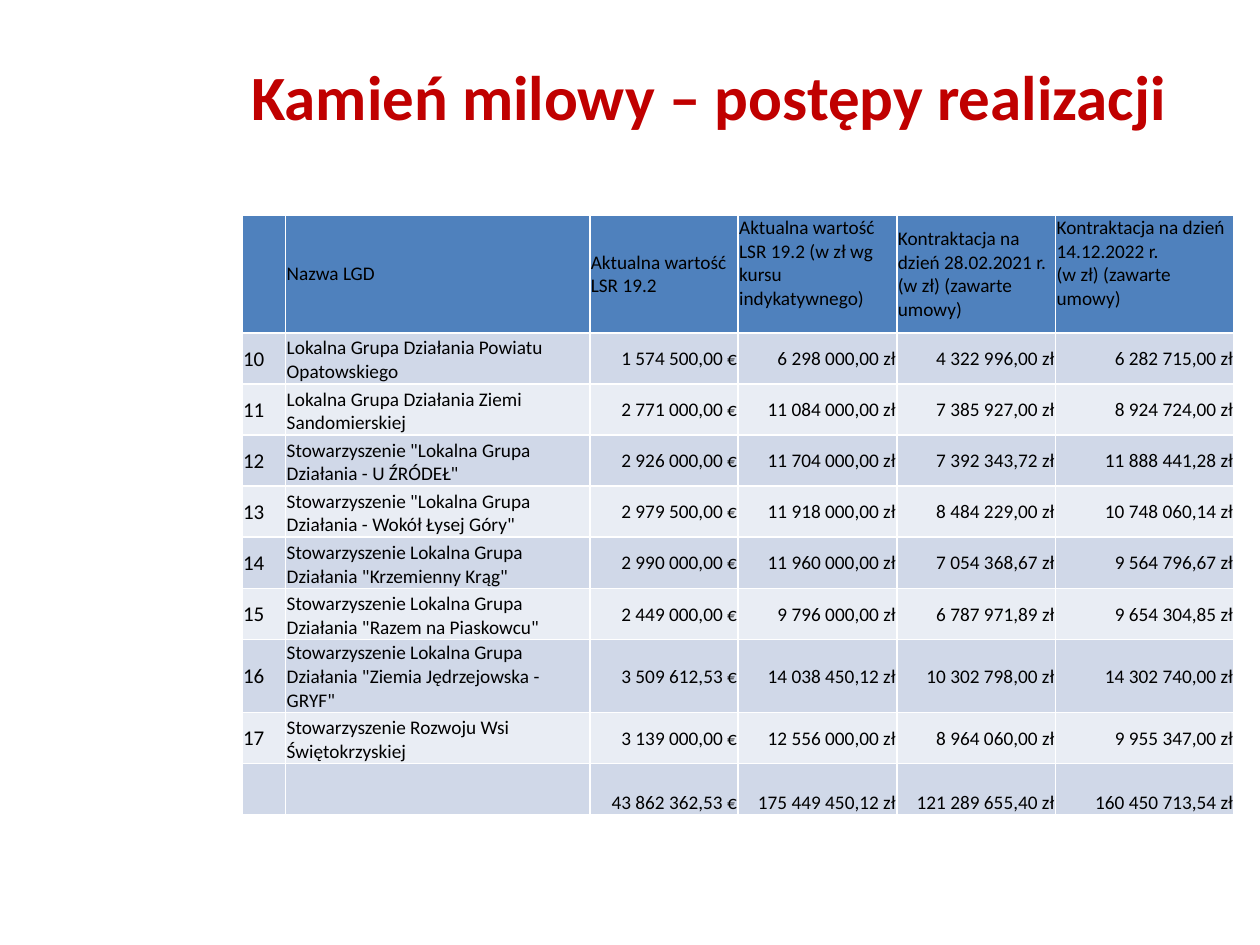
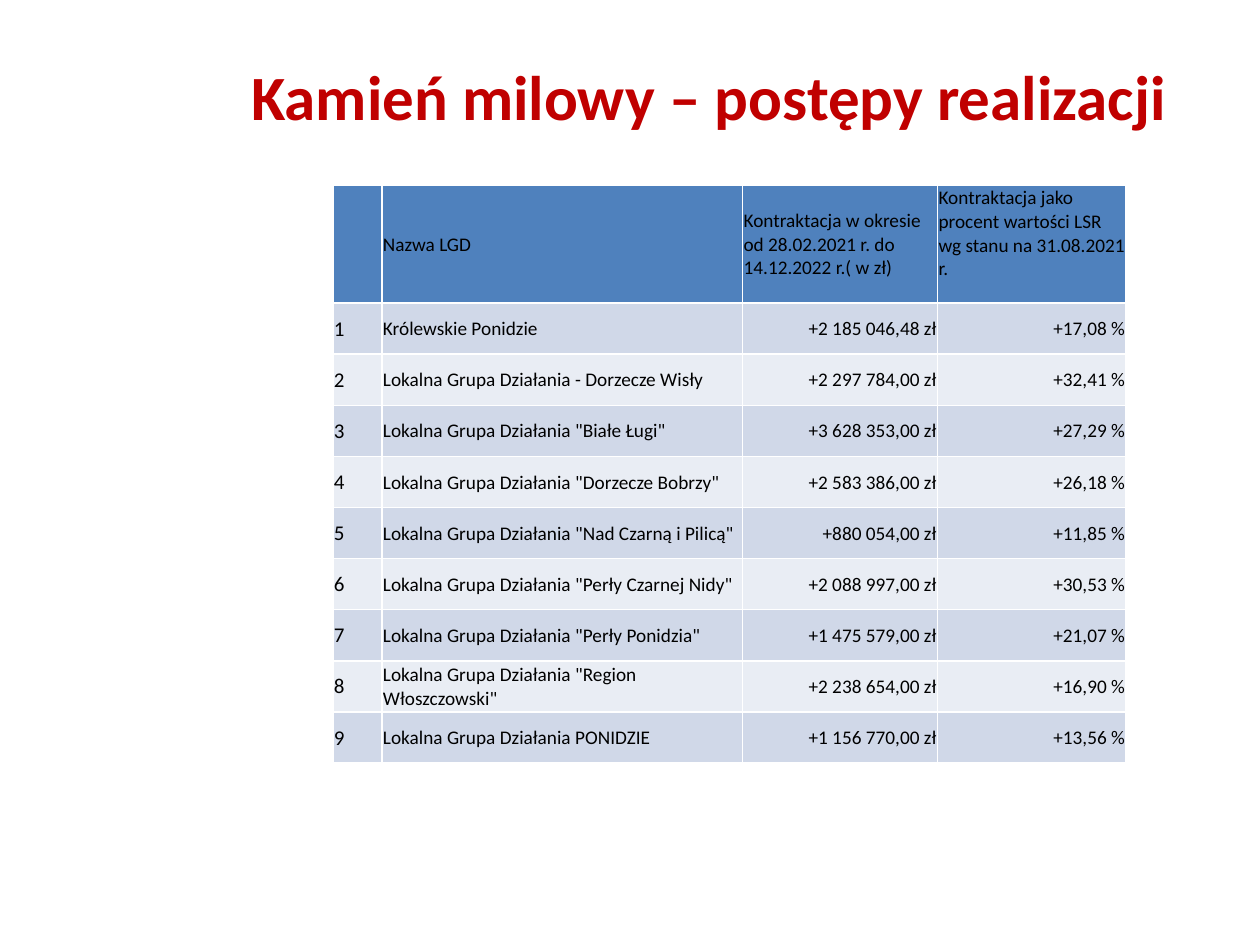
from dataclasses import dataclass
from pptx import Presentation
from pptx import util as u
from pptx.dml import color
from pptx.enum import text


@dataclass
class Theme:
    font: str = "Calibri"
    title: str = "C00000"
    ink: str = "000000"
    head: str = "4F81BD"
    bands: tuple = ("D0D8E8", "E9EDF4")
    big: int = 36
    mid: int = 12
    small: int = 11


theme = Theme()
top, mid, low = (text.MSO_ANCHOR.TOP, text.MSO_ANCHOR.MIDDLE,
                 text.MSO_ANCHOR.BOTTOM)
left, right, center = (text.PP_ALIGN.LEFT, text.PP_ALIGN.RIGHT,
                       text.PP_ALIGN.CENTER)


def style(frame, size, tone, align, bold=False):
    for para in frame.paragraphs:
        para.alignment = align
        looks = {"name": theme.font, "size": u.Pt(size), "bold": bold}
        for key, value in looks.items():
            setattr(para.font, key, value)
        para.font.color.rgb = color.RGBColor.from_string(tone)


pages = [
    {
        "left": 4.88, "top": 4.33, "names": low, "raised": (3, 5),
        "cols": [0.88, 6.13, 2.99, 3.2, 3.2, 3.6],
        "tall": {7: 1.47}, "total": 9,
        "rows": [
            ("", "Nazwa LGD", "Aktualna wartość LSR 19.2",
             "Aktualna wartość LSR 19.2 (w zł wg kursu indykatywnego)",
             "Kontraktacja na dzień 28.02.2021 r.\n(w zł) (zawarte umowy)",
             "Kontraktacja na dzień 14.12.2022 r.\n(w zł) (zawarte umowy)"),
            ("10", "Lokalna Grupa Działania Powiatu Opatowskiego",
             "1 574 500,00 €", "6 298 000,00 zł",
             "4 322 996,00 zł", "6 282 715,00 zł"),
            ("11", "Lokalna Grupa Działania Ziemi Sandomierskiej",
             "2 771 000,00 €", "11 084 000,00 zł",
             "7 385 927,00 zł", "8 924 724,00 zł"),
            ("12", 'Stowarzyszenie "Lokalna Grupa Działania - U ŹRÓDEŁ"',
             "2 926 000,00 €", "11 704 000,00 zł",
             "7 392 343,72 zł", "11 888 441,28 zł"),
            ("13", 'Stowarzyszenie "Lokalna Grupa Działania - Wokół Łysej Góry"',
             "2 979 500,00 €", "11 918 000,00 zł",
             "8 484 229,00 zł", "10 748 060,14 zł"),
            ("14", 'Stowarzyszenie Lokalna Grupa Działania "Krzemienny Krąg"',
             "2 990 000,00 €", "11 960 000,00 zł",
             "7 054 368,67 zł", "9 564 796,67 zł"),
            ("15", 'Stowarzyszenie Lokalna Grupa Działania "Razem na Piaskowcu"',
             "2 449 000,00 €", "9 796 000,00 zł",
             "6 787 971,89 zł", "9 654 304,85 zł"),
            ("16", 'Stowarzyszenie Lokalna Grupa Działania "Ziemia Jędrzejowska - GRYF"',
             "3 509 612,53 €", "14 038 450,12 zł",
             "10 302 798,00 zł", "14 302 740,00 zł"),
            ("17", "Stowarzyszenie Rozwoju Wsi Świętokrzyskiej",
             "3 139 000,00 €", "12 556 000,00 zł",
             "8 964 060,00 zł", "9 955 347,00 zł"),
            ("", "", "43 862 362,53 €", "175 449 450,12 zł",
             "121 289 655,40 zł", "160 450 713,54 zł"),
        ],
    },
    {
        "left": 6.71, "top": 3.73, "names": mid, "raised": (3,),
        "cols": [0.99, 7.27, 3.93, 3.8],
        "tall": {}, "total": None,
        "rows": [
            ("", "Nazwa LGD",
             "Kontraktacja w okresie od 28.02.2021 r. do 14.12.2022 r.( w zł)",
             "Kontraktacja jako procent wartości LSR wg stanu na 31.08.2021 r."),
            ("1", "Królewskie Ponidzie", "+2 185 046,48 zł", "+17,08 %"),
            ("2", "Lokalna Grupa Działania - Dorzecze Wisły",
             "+2 297 784,00 zł", "+32,41 %"),
            ("3", 'Lokalna Grupa Działania "Białe Ługi"',
             "+3 628 353,00 zł", "+27,29 %"),
            ("4", 'Lokalna Grupa Działania "Dorzecze Bobrzy"',
             "+2 583 386,00 zł", "+26,18 %"),
            ("5", 'Lokalna Grupa Działania "Nad Czarną i Pilicą"',
             "+880 054,00 zł", "+11,85 %"),
            ("6", 'Lokalna Grupa Działania "Perły Czarnej Nidy"',
             "+2 088 997,00 zł", "+30,53 %"),
            ("7", 'Lokalna Grupa Działania "Perły Ponidzia"',
             "+1 475 579,00 zł", "+21,07 %"),
            ("8", 'Lokalna Grupa Działania "Region Włoszczowski"',
             "+2 238 654,00 zł", "+16,90 %"),
            ("9", "Lokalna Grupa Działania PONIDZIE",
             "+1 156 770,00 zł", "+13,56 %"),
        ],
    },
]

deck = Presentation()
deck.slide_width, deck.slide_height = u.Cm(25.4), u.Cm(19.05)

for page in pages:
    slide = deck.slides.add_slide(deck.slide_layouts[6])
    box = slide.shapes.add_textbox(u.Cm(3.38), u.Cm(0.33), u.Cm(21.82), u.Cm(3))
    frame = box.text_frame
    frame.text = "Kamień milowy – postępy realizacji"
    setup = {"word_wrap": True, "vertical_anchor": mid,
             "margin_top": u.Cm(0.33), "margin_bottom": u.Cm(0.13)}
    for key, value in setup.items():
        setattr(frame, key, value)
    style(frame, theme.big, theme.title, center, True)

    rows, cols = page["rows"], page["cols"]
    highs = [2.38] + [page["tall"].get(r, 1.03) for r in range(1, len(rows))]
    grid = slide.shapes.add_table(
        len(rows), len(cols), u.Cm(page["left"]), u.Cm(page["top"]),
        u.Cm(sum(cols)), u.Cm(sum(highs))).table
    grid.horz_banding = False
    for col, width in zip(grid.columns, cols):
        col.width = u.Cm(width)
    for row, high in zip(grid.rows, highs):
        row.height = u.Cm(high)

    for r, row in enumerate(rows):
        for c, words in enumerate(row):
            cell = grid.cell(r, c)
            cell.text = words
            if r == 0:
                anchor = top if c in page["raised"] else mid
            elif r == page["total"]:
                anchor = low
            else:
                anchor = page["names"] if c == 1 else mid
            setup = {"vertical_anchor": anchor, "margin_left": u.Cm(0.02),
                     "margin_right": u.Cm(0.02), "margin_top": u.Cm(0.02),
                     "margin_bottom": 0}
            for key, value in setup.items():
                setattr(cell, key, value)
            cell.fill.solid()
            tone = theme.bands[(r - 1) % 2] if r else theme.head
            cell.fill.fore_color.rgb = color.RGBColor.from_string(tone)
            style(cell.text_frame, theme.small if c else theme.mid, theme.ink,
                  right if r and c > 1 else left)

deck.save("out.pptx")
